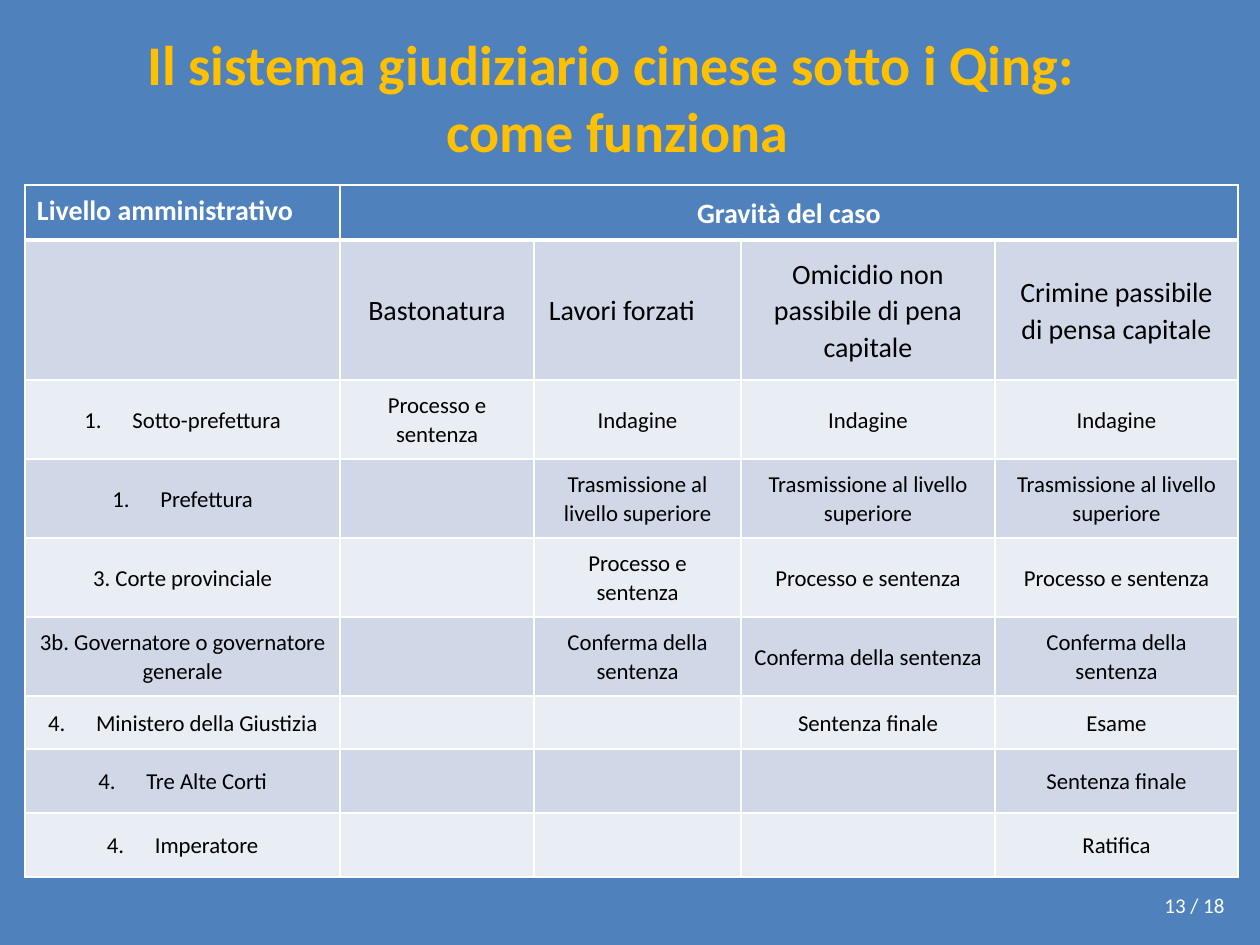
from dataclasses import dataclass

from lxml.etree import SubElement
from pptx import Presentation
from pptx.dml.color import RGBColor
from pptx.enum.text import MSO_ANCHOR, MSO_AUTO_SIZE, PP_ALIGN
from pptx.oxml.ns import qn
from pptx.util import Pt

PX = 914400 / 126


@dataclass(frozen=True)
class Theme:
    font: str = "Calibri"
    blue: str = "4F81BD"
    gold: str = "FFC000"
    white: str = "FFFFFF"
    black: str = "000000"
    bands: tuple = ("E9EDF4", "D0D8E8")
    title: int = 32
    heading: int = 16
    body: int = 13
    page: int = 12


THEME = Theme()

COLUMNS = [315, 194, 207, 254, 243]
ROWS = [55, 140, 79, 79, 79, 79, 53, 64, 64]
SENTENCE, CONFIRM = "Processo e sentenza", "Conferma della sentenza"
FORWARD, FINAL = "Trasmissione al livello superiore", "Sentenza finale"
CELLS = [
    ["Livello amministrativo", "Gravità del caso", "", "", ""],
    ["", "Bastonatura", "Lavori forzati",
     "Omicidio non passibile di pena capitale",
     "Crimine passibile di pensa capitale"],
    ["Sotto-prefettura", SENTENCE] + ["Indagine"] * 3,
    ["Prefettura", ""] + [FORWARD] * 3,
    ["3. Corte provinciale", ""] + [SENTENCE] * 3,
    ["3b. Governatore o governatore generale", ""] + [CONFIRM] * 3,
    ["Ministero della Giustizia", "", "", FINAL, "Esame"],
    ["Tre Alte Corti", "", "", "", FINAL],
    ["Imperatore", "", "", "", "Ratifica"],
]
# Row index -> first number of its automatic list
NUMBERED = {2: 1, 3: 1, 6: 4, 7: 4, 8: 4}


def px(n):
    return round(n * PX)


def place(sp, box):
    sp.left, sp.top, sp.width, sp.height = map(px, box)


def format_text(p, size, color, bold=False, align=PP_ALIGN.CENTER):
    p.alignment = align
    for r in p.runs:
        r.font.name = THEME.font
        r.font.size = Pt(size)
        r.font.bold = bold
        r.font.color.rgb = RGBColor.from_string(color)


def add_title(s, box, text):
    sp = s.shapes.title
    place(sp, box)
    tf = sp.text_frame
    tf.word_wrap = True
    tf.auto_size = MSO_AUTO_SIZE.NONE
    tf.vertical_anchor = MSO_ANCHOR.MIDDLE
    p = tf.paragraphs[0]
    p.text = text
    format_text(p, THEME.title, THEME.gold, bold=True)


def add_page_number(s, box, text):
    tf = s.shapes.add_textbox(*map(px, box)).text_frame
    tf.word_wrap = True
    tf.vertical_anchor = MSO_ANCHOR.MIDDLE
    tf.text = text
    format_text(tf.paragraphs[0], THEME.page, THEME.white, align=PP_ALIGN.RIGHT)


def number_paragraph(p, start):
    pPr = p._p.get_or_add_pPr()
    pPr.set("marL", str(px(48)))
    pPr.set("indent", str(-px(48)))
    SubElement(pPr, qn("a:buAutoNum"), type="arabicPeriod", startAt=str(start))


def set_borders(cell, **widths):
    tcPr = cell._tc.get_or_add_tcPr()
    for i, side in enumerate("LRTB"):
        ln = SubElement(tcPr, qn(f"a:ln{side}"), w=str(Pt(widths.get(side, 1))))
        fill = SubElement(ln, qn("a:solidFill"))
        SubElement(fill, qn("a:srgbClr"), val=THEME.white)
        tcPr.insert(i, ln)  # borders come before the fill


def format_cell(cell, row, col, text):
    header = row == 0
    fill = THEME.blue if header else THEME.bands[row % 2]
    cell.fill.solid()
    cell.fill.fore_color.rgb = RGBColor.from_string(fill)
    set_borders(cell, B=3 if header else 1, T=3 if row == 1 else 1)
    if not text:
        return

    first = header and col == 0
    left = first or text == "Lavori forzati"
    cell.vertical_anchor = MSO_ANCHOR.TOP if first else MSO_ANCHOR.MIDDLE
    cell.margin_left = px(15 if left and not header else 12)
    cell.margin_right = px(12)
    cell.margin_top = cell.margin_bottom = px(6)
    cell.text_frame.text = text
    p = cell.text_frame.paragraphs[0]
    p.line_spacing = 1.07
    if row == 1 and col > 2:
        p.space_after = Pt(8)
    format_text(p, THEME.heading if row < 2 else THEME.body,
                THEME.white if header else THEME.black, bold=header,
                align=PP_ALIGN.LEFT if left else PP_ALIGN.CENTER)
    if col == 0 and row in NUMBERED:
        number_paragraph(p, NUMBERED[row])


def add_case_table(s, left, top):
    box = left, top, sum(COLUMNS), sum(ROWS)
    table = s.shapes.add_table(len(ROWS), len(COLUMNS), *map(px, box)).table
    table.first_row = table.horz_banding = False
    for column, width in zip(table.columns, COLUMNS):
        column.width = px(width)
    for row, height in zip(table.rows, ROWS):
        row.height = px(height)
    table.cell(0, 1).merge(table.cell(0, len(COLUMNS) - 1))
    for i, texts in enumerate(CELLS):
        for j, text in enumerate(texts):
            format_cell(table.cell(i, j), i, j, text)


def main():
    prs = Presentation()
    prs.slide_width, prs.slide_height = px(1260), px(945)
    s = prs.slides.add_slide(prs.slide_layouts[5])
    s.background.fill.solid()
    s.background.fill.fore_color.rgb = RGBColor.from_string(THEME.blue)

    add_title(s, (-25, 38, 1285, 117),
              "Il sistema giudiziario cinese sotto i Qing: \ncome funziona")
    add_page_number(s, (1136, 880, 101, 50), "13 / 18")
    add_case_table(s, 25, 185)
    prs.save("out.pptx")


if __name__ == "__main__":
    main()
